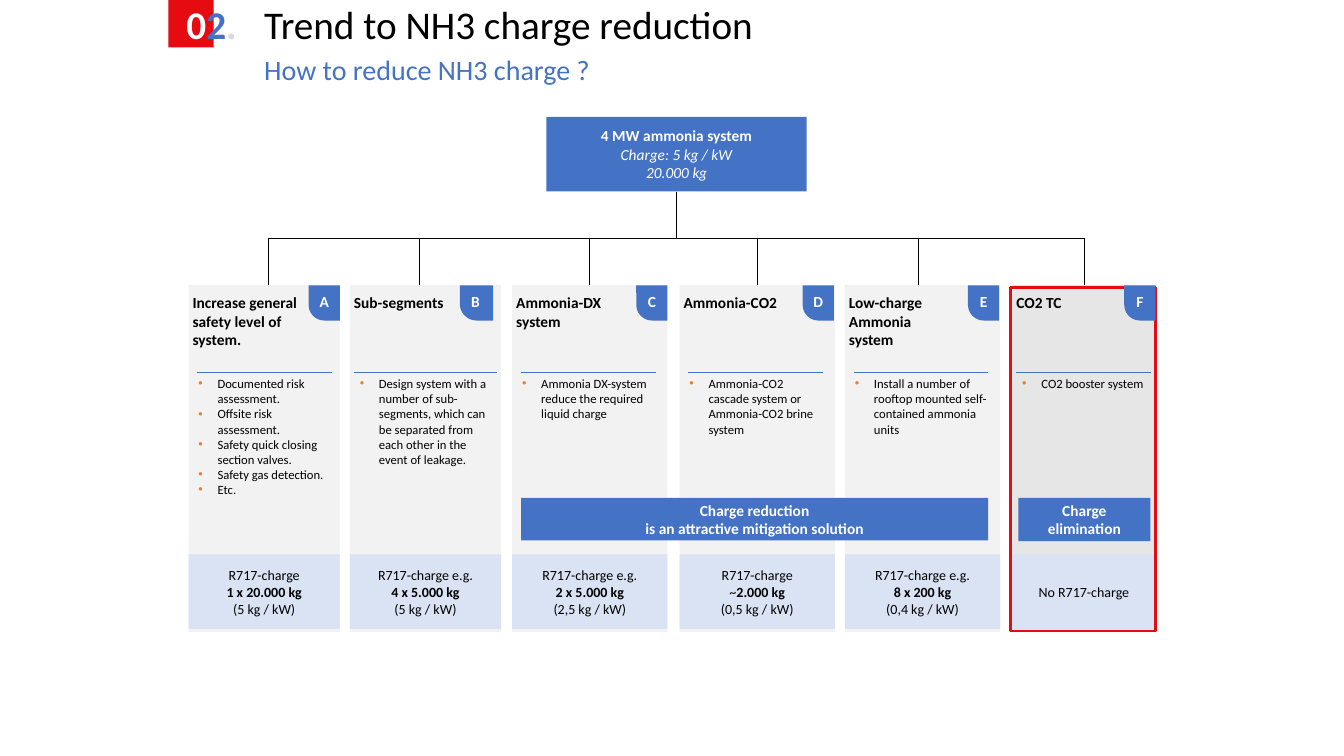
from lxml import etree
from pptx import Presentation
from pptx.dml.color import RGBColor
from pptx.enum.shapes import MSO_CONNECTOR, MSO_SHAPE
from pptx.enum.text import MSO_ANCHOR, PP_ALIGN
from pptx.oxml.ns import qn
from pptx.util import Pt

RECT = MSO_SHAPE.RECTANGLE
TAB = MSO_SHAPE.ROUND_1_RECTANGLE
LINE = MSO_CONNECTOR.STRAIGHT
TOP, MIDDLE = MSO_ANCHOR.TOP, MSO_ANCHOR.MIDDLE
LEFT, CENTER = PP_ALIGN.LEFT, PP_ALIGN.CENTER

PX = 9144
FONT = "Calibri"
HUES = {
    "white": "FFFFFF", "black": "000000", "blue": "4472C4", "pale": "DAE3F3",
    "light": "F2F2F2", "gray": "E7E6E6", "red": "E60A11", "orange": "ED7D31",
    "dot": "D9D9D9",
}
BUS, HEAD = 236, 283

# letter, left, width, drop x, tab left, tab width, rule ends, title, points, charge
CARDS = [
    ("A", 187, 150, 266, 306, 31, (195, 329), "Increase general safety level of system.",
     ["Documented risk assessment.", "Offsite risk assessment.",
      "Safety quick closing section valves.", "Safety gas detection.", "Etc."],
     ["R717-charge", "1 x 20.000 kg", "(5 kg / kW)"]),
    ("B", 347, 150, 416, 456, 33, (351, 493), "Sub-segments",
     ["Design system with a number of sub-segments, which can be separated "
      "from each other in the event of leakage."],
     ["R717-charge e.g.", "4 x 5.000 kg", "(5 kg / kW)"]),
    ("C", 508, 154, 585, 631, 31, (517, 651), "Ammonia-DX system",
     ["Ammonia DX-system reduce the required liquid charge"],
     ["R717-charge e.g.", "2 x 5.000 kg", "(2,5 kg / kW)"]),
    ("D", 674, 154, 751, 796, 31, (682, 816), "Ammonia-CO2",
     ["Ammonia-CO2 cascade system or Ammonia-CO2 brine system"],
     ["R717-charge", "~2.000 kg", "(0,5 kg / kW)"]),
    ("E", 838, 154, 911, 960, 31, (847, 980), "Low-charge Ammonia system",
     ["Install a number of rooftop mounted self-contained ammonia units"],
     ["R717-charge e.g.", "8 x 200 kg", "(0,4 kg / kW)"]),
    ("F", 1004, 142, 1075, 1115, 31, (1008, 1142), "CO2 TC",
     ["CO2 booster system"], ["No R717-charge"]),
]


def color(name):
    return RGBColor.from_string(HUES[name])


def style(run, size, hue, bold=False):
    font = run.font
    font.name, font.size, font.bold = FONT, Pt(size), bold
    font.color.rgb = color(hue)


def add(para, text, size, hue, bold=False):
    run = para.add_run()
    run.text = text
    style(run, size, hue, bold)


def write(shape, lines, size, hue, bold=False, align=CENTER, anchor=MIDDLE):
    frame = shape.text_frame
    frame.word_wrap = True
    frame.vertical_anchor = anchor
    frame.text = "\n".join(lines)
    for para in frame.paragraphs:
        para.alignment = align
        for run in para.runs:
            style(run, size, hue, bold)
    return frame


def inset(frame, left, top, right, base):
    frame.margin_left, frame.margin_top = left * PX, top * PX
    frame.margin_right, frame.margin_bottom = right * PX, base * PX


def block(slide, x, y, w, h, fill=None, edge=None, kind=RECT):
    shape = slide.shapes.add_shape(kind, x * PX, y * PX, w * PX, h * PX)
    shape.shadow.inherit = False
    if fill:
        shape.fill.solid()
        shape.fill.fore_color.rgb = color(fill)
    else:
        shape.fill.background()
    if edge:
        shape.line.color.rgb = color(edge)
        shape.line.width = Pt(2)
    else:
        shape.line.fill.background()
    return shape


def label(slide, x, y, w, h, text, size, hue, bold=False, align=LEFT):
    box = slide.shapes.add_textbox(x * PX, y * PX, w * PX, h * PX)
    frame = write(box, [text], size, hue, bold, align, TOP)
    inset(frame, 0, 0, 0, 0)
    return frame


def link(slide, x1, y1, x2, y2, hue="black"):
    line = slide.shapes.add_connector(LINE, x1 * PX, y1 * PX, x2 * PX, y2 * PX)
    line.line.color.rgb = color(hue)
    line.line.width = Pt(0.5)
    etree.SubElement(line._element.spPr, qn("a:effectLst"))
    return line


def bullet(para):
    props = para._p.get_or_add_pPr()
    props.set("marL", str(19 * PX))
    props.set("indent", str(-19 * PX))
    tint = etree.SubElement(props, qn("a:buClr"))
    etree.SubElement(tint, qn("a:srgbClr"), val=HUES["orange"])
    etree.SubElement(props, qn("a:buFont"), typeface="Arial")
    etree.SubElement(props, qn("a:buChar"), char="•")


def charge(slide, x, w, lines):
    frame = write(block(slide, x, 550, w, 74, "pale"), lines, 10, "black")
    if len(lines) > 1:
        para = frame.paragraphs[1]
        if lines[1].startswith("~"):
            para.runs[0].text = "~"
            add(para, lines[1][1:], 10, "black", True)
        else:
            para.runs[0].font.bold = True


def card(slide, mark, x, w, drop, tab, wide, rule, title, points, total):
    last = mark == "F"
    body = block(slide, x, HEAD, w, 344, "gray" if last else "light")
    frame = write(body, points, 9, "black", align=LEFT, anchor=TOP)
    inset(frame, 10, 90, 10, 0)
    for para in frame.paragraphs:
        bullet(para)
    label(slide, x + 4, 291, 107, 56, title, 11, "black", True)
    charge(slide, x, w, total)
    link(slide, rule[0], 369, rule[1], 369, "blue")
    line = link(slide, drop, BUS, drop, HEAD)
    if drop * 2 == x * 2 + w:
        line.end_connect(body, 0)
    if last:
        block(slide, 1002, 285, 144, 341, edge="red")
    flag = block(slide, tab, HEAD, wide, 35, "blue", kind=TAB)
    flag.adjustments[0] = 0.5
    flag.rotation = 180
    label(slide, tab + 3, 290, 25, 19, mark, 11, "white", True, CENTER)


def banner(slide, x, w, h, text):
    write(block(slide, x, 494, w, h, "blue"), [text], 11, "white", True)


def tree(slide):
    root = block(slide, 542, 116, 258, 74, "blue")
    lines = ["4 MW ammonia system", "Charge: 5 kg / kW", "20.000 kg"]
    first, *rest = write(root, lines, 11, "white").paragraphs
    first.runs[0].font.bold = True
    for para in rest:
        para.runs[0].font.italic = True
    link(slide, CARDS[0][3], BUS, CARDS[-1][3], BUS)
    link(slide, 671, 190, 671, BUS).begin_connect(root, 2)


def header(slide):
    label(slide, 262, 0, 896, 50, "Trend to NH3 charge reduction", 28, "black")
    block(slide, 167, 0, 45, 47, "red")
    para = label(slide, 185, 0, 77, 47, "0", 28, "white", True).paragraphs[0]
    add(para, "2", 28, "blue", True)
    add(para, ".", 28, "dot", True)
    label(slide, 262, 52, 859, 47, "How to reduce NH3 charge ?", 20, "blue")


def main():
    deck = Presentation()
    deck.slide_width, deck.slide_height = 1333 * PX, 750 * PX
    slide = deck.slides.add_slide(deck.slide_layouts[6])
    tree(slide)
    for row in CARDS:
        card(slide, *row)
    banner(slide, 1010, 131, 43, "Charge elimination")
    banner(slide, 517, 463, 42, "Charge reduction\vis an attractive mitigation solution")
    header(slide)
    deck.save("out.pptx")


if __name__ == "__main__":
    main()
